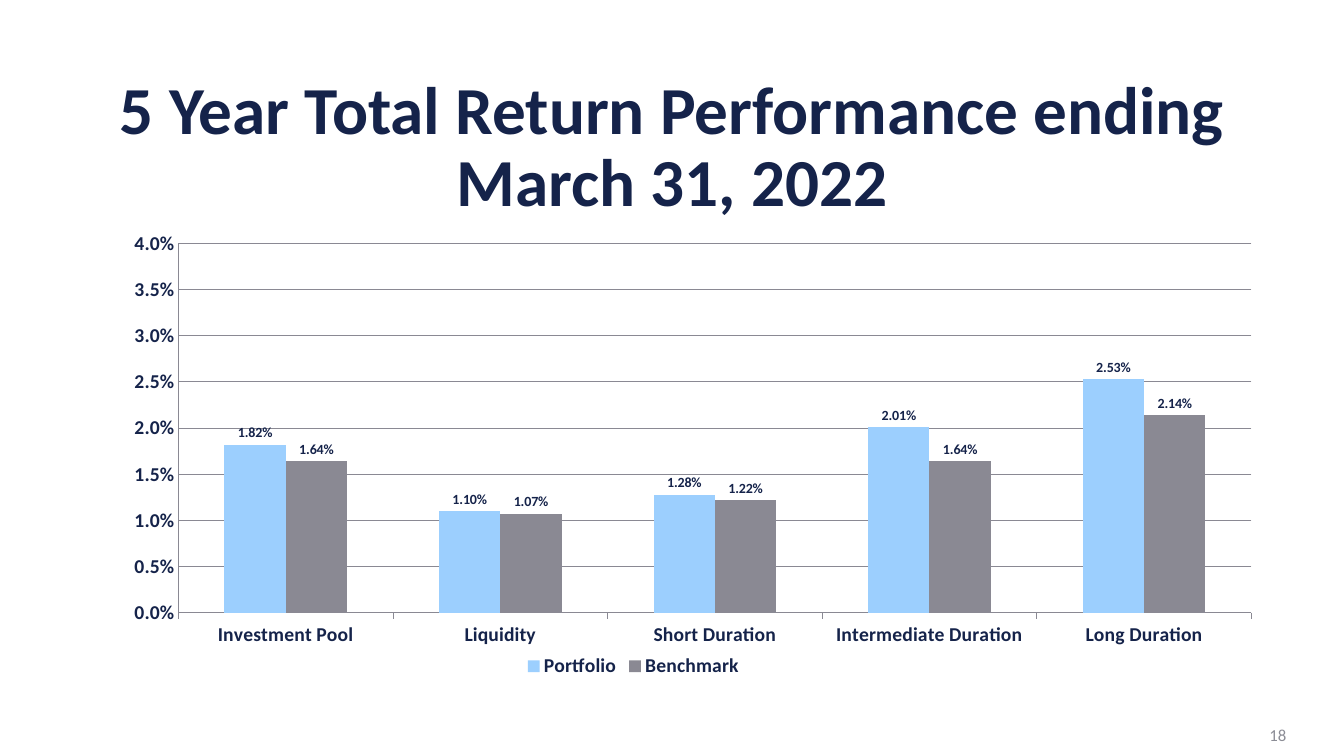
"""Build the five-year total return performance slide."""
from typing import NamedTuple

from lxml import etree
from pptx import Presentation
from pptx.chart import data as chart_data
from pptx.dml.color import RGBColor
from pptx.enum import chart as chart_enum, text
from pptx.oxml import ns
from pptx.util import Pt

FONT = "Calibri"
NAVY, SKY, GREY, PALE_GREY = "15234A", "9CCFFE", "8A8993", "8C8D96"


class Box(NamedTuple):
    left: float
    top: float
    width: float
    height: float


class Label(NamedTuple):
    box: Box
    runs: tuple[str, ...]
    size: float
    color: str
    bold: bool
    align: text.PP_ALIGN
    spacing: float


class Returns(NamedTuple):
    name: str
    color: str
    values: tuple[float, ...]


CHART_BOX = Box(66.24, 158.4, 828, 329.04)
LABELS = (
    Label(Box(66.24, 54, 828, 104.4),
          ("5 Year Total Return Performance ending March 31, 2022",),
          48, NAVY, True, text.PP_ALIGN.CENTER, 0.9),
    Label(Box(709.92, 510.48, 216, 28.8), ("18",),
          12, PALE_GREY, False, text.PP_ALIGN.RIGHT, 1),
)
CATEGORIES = ("Investment Pool", "Liquidity", "Short Duration",
              "Intermediate Duration", "Long Duration")
SERIES = (
    Returns("Portfolio", SKY, (0.0182, 0.011, 0.0128, 0.0201, 0.0253)),
    Returns("Benchmark", GREY, (0.0164, 0.0107, 0.0122, 0.0164, 0.0214)),
)


def rgb(color: str) -> RGBColor:
    """Turn a hex string into a colour."""
    return RGBColor.from_string(color)


def style_font(font, size: float, color: str, bold: bool) -> None:
    """Set the typeface, size, colour and weight."""
    font.name, font.size, font.bold = FONT, Pt(size), bold
    font.color.rgb = rgb(color)


def add_label(slide, label: Label) -> None:
    """Add a vertically centred text box."""
    shape = slide.shapes.add_textbox(*map(Pt, label.box))
    frame = shape.text_frame
    frame.word_wrap = True
    frame.vertical_anchor = text.MSO_ANCHOR.MIDDLE
    paragraph = frame.paragraphs[0]
    paragraph.alignment = label.align
    paragraph.line_spacing = label.spacing
    for words in label.runs:
        run = paragraph.add_run()
        run.text = words
        style_font(run.font, label.size, label.color, label.bold)


def place(parent, index: int, **settings: str | float) -> None:
    """Give a chart part a manual layout."""
    for old in parent.findall(ns.qn("c:layout")):
        parent.remove(old)
    layout = etree.Element(ns.qn("c:layout"))
    manual = etree.SubElement(layout, ns.qn("c:manualLayout"))
    for name, value in settings.items():
        etree.SubElement(manual, ns.qn(f"c:{name}")).set("val", str(value))
    parent.insert(index, layout)


def style_line(line) -> None:
    """Draw a thin grey chart line."""
    line.color.rgb = rgb(GREY)
    line.width = Pt(0.75)


def add_returns_chart(slide, box: Box) -> None:
    """Add the clustered column chart of returns."""
    data = chart_data.CategoryChartData(number_format="0.00%")
    data.categories = CATEGORIES
    for returns in SERIES:
        data.add_series(returns.name, returns.values)
    chart = slide.shapes.add_chart(
        chart_enum.XL_CHART_TYPE.COLUMN_CLUSTERED, *map(Pt, box), data).chart
    style_font(chart.font, 18, NAVY, False)
    chart.has_title = False

    plot = chart.plots[0]
    plot.gap_width, plot.overlap = 150, 0
    plot.vary_by_categories = False
    for series, returns in zip(plot.series, SERIES):
        series.format.fill.solid()
        series.format.fill.fore_color.rgb = rgb(returns.color)
        labels = series.data_labels
        labels.show_value = True
        labels.number_format, labels.number_format_is_linked = "0.00%", False
        labels.position = chart_enum.XL_LABEL_POSITION.OUTSIDE_END
        style_font(labels.font, 10, NAVY, True)

    for axis in (chart.category_axis, chart.value_axis):
        style_font(axis.tick_labels.font, 14, NAVY, True)
        style_line(axis.format.line)
    chart.category_axis.major_tick_mark = chart_enum.XL_TICK_MARK.OUTSIDE
    values = chart.value_axis
    values.major_tick_mark = chart_enum.XL_TICK_MARK.INSIDE
    values.minimum_scale, values.maximum_scale, values.major_unit = 0, 0.04, 0.005
    values.tick_labels.number_format = "0.0%"
    values.tick_labels.number_format_is_linked = False
    values.has_major_gridlines = True
    style_line(values.major_gridlines.format.line)

    chart.has_legend = True
    legend = chart.legend
    legend.position = chart_enum.XL_LEGEND_POSITION.BOTTOM
    legend.include_in_layout = False
    style_font(legend.font, 14, NAVY, True)
    place(chart.element.find(".//" + ns.qn("c:legend")), 1,
          xMode="edge", yMode="edge", x=0.37, y=0.93)
    place(chart.element.find(".//" + ns.qn("c:plotArea")), 0,
          layoutTarget="inner", xMode="edge", yMode="edge",
          x=0.074, y=0.047, w=0.926, h=0.802)


def main() -> None:
    """Create and save the presentation."""
    presentation = Presentation()
    presentation.slide_width, presentation.slide_height = Pt(960), Pt(540)
    slide = presentation.slides.add_slide(presentation.slide_layouts[6])
    for label in LABELS:
        add_label(slide, label)
    add_returns_chart(slide, CHART_BOX)
    presentation.save("out.pptx")


if __name__ == "__main__":
    main()
